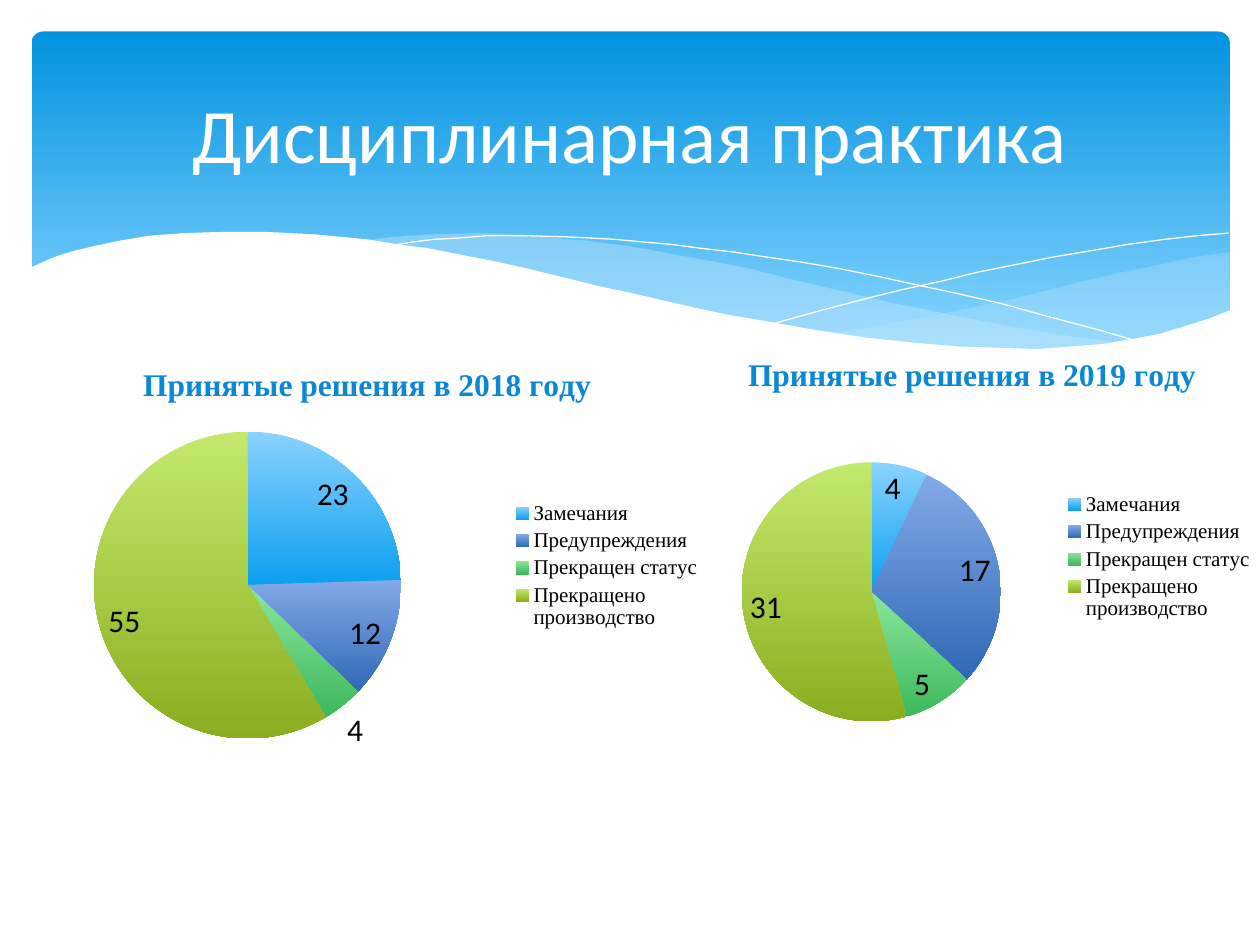
from dataclasses import dataclass

from lxml import etree
from pptx import Presentation
from pptx.chart.data import CategoryChartData
from pptx.dml.color import RGBColor
from pptx.enum.chart import XL_CHART_TYPE, XL_LABEL_POSITION, XL_LEGEND_POSITION
from pptx.enum.shapes import MSO_SHAPE
from pptx.enum.text import MSO_ANCHOR, PP_ALIGN
from pptx.oxml.ns import qn
from pptx.util import Inches, Pt

PIE = XL_CHART_TYPE.PIE
BEST_FIT = XL_LABEL_POSITION.BEST_FIT
LEGEND_RIGHT = XL_LEGEND_POSITION.RIGHT
ROUNDED = MSO_SHAPE.ROUNDED_RECTANGLE
MIDDLE = MSO_ANCHOR.MIDDLE
CENTER = PP_ALIGN.CENTER


@dataclass(frozen=True)
class Theme:
    white: str = "FFFFFF"
    black: str = "000000"
    heading: str = "0B87D6"
    mist: str = "C6E7FC"
    banner: tuple = ("0293E0", "83D3FE")
    slices: tuple = (("8AD2FF", "0D9FEE"), ("82A9E8", "3068B4"),
                     ("8AE79C", "3DB85C"), ("C3E96C", "8AAE20"))
    sans: str = "Calibri"
    serif: str = "Times New Roman"
    title_size: int = 44
    chart_size: int = 18
    legend_size: int = 12


CATEGORIES = ("Замечания", "Предупреждения", "Прекращен статус",
              "Прекращено производство")

# Wave outlines: (x, y) points in inches
RIGHT_MIST = [
    (9.76, 2), (9.48, 2.04), (9.21, 2.1), (8.91, 2.16), (8.61, 2.23),
    (8.05, 2.37), (7.53, 2.48), (7.06, 2.57), (6.61, 2.65), (6.91, 2.69),
    (7.19, 2.72), (7.45, 2.75), (7.69, 2.77), (8.03, 2.78), (8.35, 2.77),
    (8.63, 2.75), (8.89, 2.72), (9.13, 2.67), (9.35, 2.62), (9.49, 2.57),
    (9.63, 2.52), (9.76, 2.47)]
MIDDLE_MIST = [
    (8.93, 2.73), (8.66, 2.69), (8.37, 2.65), (8.07, 2.6), (7.75, 2.54),
    (7.41, 2.47), (7.06, 2.4), (6.68, 2.31), (6.29, 2.22), (5.98, 2.14),
    (5.69, 2.08), (5.41, 2.03), (5.14, 1.98), (4.89, 1.94), (4.65, 1.91),
    (4.42, 1.89), (4.2, 1.87), (3.8, 1.85), (3.44, 1.86), (3.13, 1.88),
    (2.86, 1.91), (3.23, 1.96), (3.62, 2.03), (4.04, 2.11), (4.49, 2.22),
    (4.91, 2.32), (5.3, 2.4), (5.66, 2.48), (6.01, 2.55), (6.34, 2.61),
    (6.65, 2.66), (6.95, 2.7), (7.22, 2.74), (7.48, 2.76), (7.73, 2.77),
    (7.96, 2.78), (8.28, 2.78), (8.57, 2.77), (8.76, 2.75)]
FALLING_CURVE = [
    (3.09, 1.95), (3.28, 1.92), (3.44, 1.9), (3.63, 1.89), (3.87, 1.87),
    (4.16, 1.87), (4.5, 1.88), (4.89, 1.9), (5.1, 1.92), (5.33, 1.94),
    (5.56, 1.97), (5.82, 2), (6.08, 2.04), (6.36, 2.08), (6.65, 2.13),
    (6.95, 2.19), (7.27, 2.26), (7.6, 2.33), (7.95, 2.41), (8.31, 2.51),
    (8.69, 2.61), (9.07, 2.72)]
RISING_CURVE = [
    (6.13, 2.57), (6.53, 2.46), (6.95, 2.35), (7.2, 2.29), (7.48, 2.23),
    (7.76, 2.16), (8.06, 2.1), (8.36, 2.04), (8.66, 1.99), (8.95, 1.94),
    (9.24, 1.9), (9.51, 1.87), (9.75, 1.85)]
WHITE_WAVE = [
    (9.77, 2.46), (9.59, 2.53), (9.4, 2.59), (9.2, 2.65), (8.99, 2.69),
    (8.75, 2.73), (8.5, 2.75), (8.23, 2.77), (7.93, 2.76), (7.61, 2.75),
    (7.26, 2.72), (6.88, 2.68), (6.48, 2.62), (6.03, 2.54), (5.79, 2.5),
    (5.55, 2.45), (5.29, 2.39), (5.03, 2.33), (4.75, 2.27), (4.47, 2.2),
    (4.18, 2.13), (3.91, 2.07), (3.65, 2.02), (3.4, 1.97), (3.16, 1.94),
    (2.92, 1.9), (2.71, 1.88), (2.5, 1.86), (2.3, 1.85), (2.11, 1.84),
    (1.77, 1.84), (1.46, 1.85), (1.19, 1.87), (0.95, 1.91), (0.76, 1.95),
    (0.59, 1.99), (0.46, 2.03), (0.36, 2.07), (0.23, 2.13), (0.23, 3.29),
    (9.77, 3.29)]


class SlideBuilder:
    def __init__(self, slide, theme):
        self.slide, self.theme = slide, theme

    def style_font(self, font, size, name, color, bold=False):
        font.size, font.name, font.bold = Pt(size), name, bold
        font.color.rgb = RGBColor.from_string(color)

    def fade(self, fill, colors, end=1.0):
        """Fill from top to bottom with two colours."""
        fill.gradient()
        fill.gradient_angle = 270
        for stop, color, position in zip(fill.gradient_stops, colors, (0, end)):
            stop.color.rgb = RGBColor.from_string(color)
            stop.position = position

    def banner(self, left, top, width, height):
        box = self.slide.shapes.add_shape(
            ROUNDED, Inches(left), Inches(top), Inches(width), Inches(height))
        box.adjustments[0] = 0.034
        box.shadow.inherit = False
        box.line.fill.background()
        self.fade(box.fill, self.theme.banner, 0.9)

    def outline(self, points, close):
        vertices = [(Inches(x), Inches(y)) for x, y in points]
        builder = self.slide.shapes.build_freeform(*vertices[0])
        builder.add_line_segments(vertices[1:], close=close)
        shape = builder.convert_to_shape()
        shape.shadow.inherit = False
        return shape

    def wave(self, points, color, opacity=100):
        shape = self.outline(points, True)
        shape.line.fill.background()
        shape.fill.solid()
        shape.fill.fore_color.rgb = RGBColor.from_string(color)
        if opacity < 100:
            tint = shape.fill._xPr.find(qn("a:solidFill"))[0]
            etree.SubElement(tint, qn("a:alpha"), val=str(opacity * 1000))

    def curve(self, points):
        shape = self.outline(points, False)
        shape.fill.background()
        shape.line.width = Pt(0)
        shape.line.color.rgb = RGBColor.from_string(self.theme.white)

    def title(self, text, left, top, width, height):
        box = self.slide.shapes.add_textbox(
            Inches(left), Inches(top), Inches(width), Inches(height))
        frame = box.text_frame
        frame.word_wrap = True
        frame.vertical_anchor = MIDDLE
        para = frame.paragraphs[0]
        para.alignment = CENTER
        span = para.add_run()
        span.text = text
        self.style_font(span.font, self.theme.title_size, self.theme.sans, self.theme.white)

    def set_layout(self, parent, index, area, inner=False):
        """Place a chart part by its x, y, width and height as chart fractions."""
        for old in parent.findall(qn("c:layout")):
            parent.remove(old)
        layout = etree.Element(qn("c:layout"))
        manual = etree.SubElement(layout, qn("c:manualLayout"))
        settings = [("layoutTarget", "inner")] if inner else []
        settings += [("xMode", "edge"), ("yMode", "edge"), *zip("xywh", area)]
        for tag, value in settings:
            etree.SubElement(manual, qn(f"c:{tag}"), val=str(value))
        parent.insert(index, layout)

    def pie(self, heading, values, frame, plot_area, legend_area):
        theme = self.theme
        data = CategoryChartData()
        data.categories = CATEGORIES
        data.add_series(heading, values)
        chart = self.slide.shapes.add_chart(PIE, *map(Inches, frame), data).chart
        self.style_font(chart.font, theme.chart_size, theme.sans, theme.black)

        chart.has_title = True
        span = chart.chart_title.text_frame.paragraphs[0].add_run()
        span.text = heading
        self.style_font(span.font, theme.chart_size, theme.serif, theme.heading, True)

        chart.has_legend = True
        legend = chart.legend
        legend.position = LEGEND_RIGHT
        legend.include_in_layout = False
        self.style_font(legend.font, theme.legend_size, theme.serif, theme.black)
        self.set_layout(legend._element, 1, legend_area)
        plot_element = chart.element.find(qn("c:chart")).find(qn("c:plotArea"))
        self.set_layout(plot_element, 0, plot_area, inner=True)

        plot = chart.plots[0]
        plot.vary_by_categories = True
        plot.has_data_labels = True
        labels = plot.data_labels
        labels.show_value, labels.show_percentage = True, False
        labels.position = BEST_FIT
        self.style_font(labels.font, theme.chart_size, theme.sans, theme.black)
        for index, colors in enumerate(theme.slices):
            slice_format = plot.series[0].points[index].format
            self.fade(slice_format.fill, colors)
            slice_format.line.fill.background()


def main():
    deck = Presentation()
    deck.slide_width, deck.slide_height = Inches(10), Inches(7.5)
    theme = Theme()
    page = SlideBuilder(deck.slides.add_slide(deck.slide_layouts[6]), theme)
    page.banner(0.25, 0.25, 9.51, 2.7)
    page.wave(RIGHT_MIST, theme.mist, 29)
    page.wave(MIDDLE_MIST, theme.mist, 40)
    page.curve(FALLING_CURVE)
    page.curve(RISING_CURVE)
    page.wave(WHITE_WAVE, theme.white)
    page.title("Дисциплинарная практика", 0.5, 0.37, 9, 1.37)
    page.pie("Принятые решения в 2019 году", (4, 17, 5, 31), (5.43, 2.65, 4.57, 3.5),
             (0.1, 0.29, 0.45, 0.59), (0.65, 0.35, 0.35, 0.31))
    page.pie("Принятые решения в 2018 году", (23, 12, 4, 55), (0.2, 2.73, 5.43, 3.48),
             (0.1, 0.2, 0.45, 0.7), (0.7, 0.35, 0.3, 0.31))
    deck.save("out.pptx")


if __name__ == "__main__":
    main()
